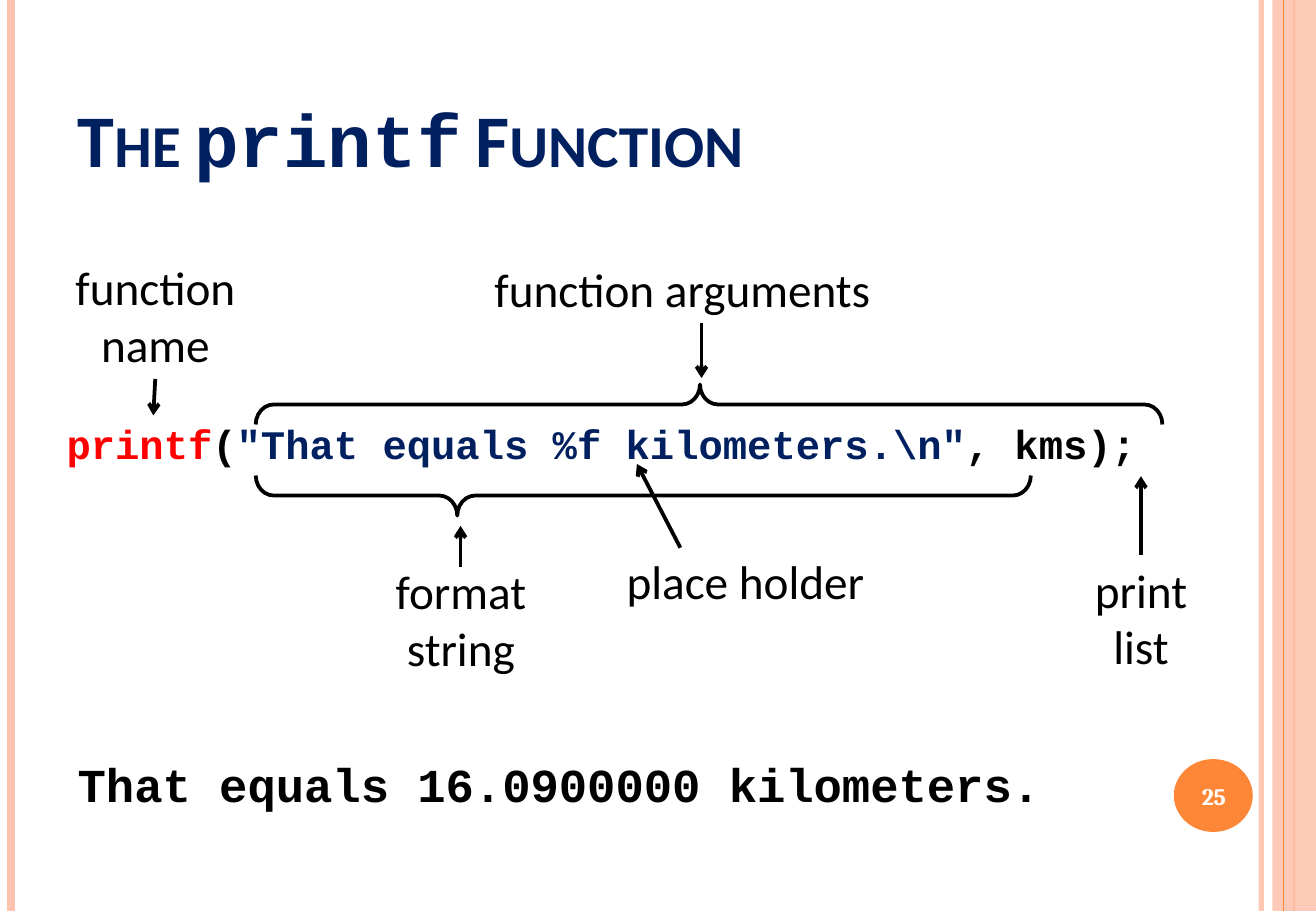
from lxml.etree import SubElement
from pptx import Presentation
from pptx.dml.color import RGBColor
from pptx.enum.shapes import MSO_CONNECTOR, MSO_SHAPE
from pptx.enum.text import MSO_ANCHOR, PP_ALIGN
from pptx.oxml.ns import qn
from pptx.util import Inches, Pt

COLORS = {
    "navy": "002060", "black": "000000", "red": "FF0000",
    "white": "FFFFFF", "peach": "FEC3AE", "orange": "FE8637",
}
BODY, CODE, NUMBER = "Calibri", "Courier New", "Cambria"
ARROW_WIDTH = 2.25


def color(name):
    return RGBColor.from_string(COLORS[name])


def set_alpha(fill_owner, percent):
    """Make the solid colour inside an element partly transparent."""
    for srgb in fill_owner.iter(qn("a:srgbClr")):
        SubElement(srgb, qn("a:alpha"), val=str(percent * 1000))


def add_text(paragraph, words, font=BODY, size=28, ink="black", bold=False, small_caps=False):
    run = paragraph.add_run()
    run.text = words
    run.font.name, run.font.size, run.font.bold = font, Pt(size), bold
    run.font.color.rgb = color(ink)
    if small_caps:
        run.font._element.set("cap", "small")


class Board:
    """Draws on one slide; lengths are percent of its width and height."""

    def __init__(self, deck):
        self.width, self.height = deck.slide_width, deck.slide_height
        self.slide = deck.slides.add_slide(deck.slide_layouts[6])
        self.shapes = self.slide.shapes

    def x(self, share):
        return round(self.width * share / 100)

    def y(self, share):
        return round(self.height * share / 100)

    def area(self, left, top, width, height):
        return self.x(left), self.y(top), self.x(width), self.y(height)

    def block(self, preset, area, fill, alpha=100):
        block = self.shapes.add_shape(preset, *self.area(*area))
        block.shadow.inherit = False
        block.fill.solid()
        block.fill.fore_color.rgb = color(fill)
        block.line.fill.background()
        if alpha < 100:
            set_alpha(block._element.spPr, alpha)

    def line(self, start, end, ink="black", width=ARROW_WIDTH, alpha=100):
        line = self.shapes.add_connector(
            MSO_CONNECTOR.STRAIGHT,
            self.x(start[0]), self.y(start[1]), self.x(end[0]), self.y(end[1]))
        line.line.color.rgb = color(ink)
        line.line.width = Pt(width)
        properties = line._element.spPr
        SubElement(properties, qn("a:effectLst"))
        if alpha < 100:
            set_alpha(properties, alpha)
        return line

    def rule(self, x, ink, width, alpha=100):
        self.line((x, 0), (x, 100), ink, width, alpha)

    def arrow(self, start, end, source=None, side=0):
        """Draw an arrow, joined to a side of the source label if given."""
        arrow = self.line(start, end)
        SubElement(arrow.line._get_or_add_ln(), qn("a:tailEnd"), type="arrow")
        if source is not None:
            arrow.begin_connect(source, side)

    def text(self, area, *runs, align=PP_ALIGN.LEFT, anchor=MSO_ANCHOR.TOP, before=0):
        """Add a one-paragraph box; each run is a pair of words and format."""
        box = self.shapes.add_textbox(*self.area(*area))
        box.text_frame.word_wrap = True
        box.text_frame.vertical_anchor = anchor
        paragraph = box.text_frame.paragraphs[0]
        paragraph.alignment = align
        paragraph.space_before = Pt(before)
        for words, style in runs:
            add_text(paragraph, words, **style)
        return box

    def label(self, words, area, align=PP_ALIGN.CENTER):
        return self.text(area, (words, {}), align=align)

    def brace(self, area, tip, rotation):
        """Lay a right brace on its side so that it covers the given area."""
        left, top, width, height = self.area(*area)
        brace = self.shapes.add_shape(
            MSO_SHAPE.RIGHT_BRACE, left + (width - height) // 2,
            top + (height - width) // 2, height, width)
        brace.rotation = rotation
        brace.adjustments[0], brace.adjustments[1] = 0.45, tip
        brace.shadow.inherit = False
        brace.fill.background()
        brace.line.color.rgb = color("black")
        brace.line.width = Pt(ARROW_WIDTH)


def draw_frame(board):
    board.rule(95.84, "peach", 3, alpha=93)
    board.rule(0.83, "peach", 4.5)
    board.rule(98.34, "orange", 1.5)
    board.block(MSO_SHAPE.RECTANGLE, (96.68, 0, 3.32, 100), "peach", alpha=87)
    board.rule(97.51, "orange", 0.75)
    board.block(MSO_SHAPE.OVAL, (89.2, 83.33, 6, 8), "orange")
    board.text((88.92, 83.6, 6.65, 7.6),
               ("25", dict(font=NUMBER, size=14, ink="white", bold=True)),
               align=PP_ALIGN.CENTER, anchor=MSO_ANCHOR.MIDDLE)


def draw_text(board):
    heading = dict(size=44, ink="navy", bold=True)
    board.text((5, 4, 81.7, 16.67),
               ("The ", dict(heading, small_caps=True)),
               ("printf", dict(heading, font=CODE)),
               (" Function", dict(heading, small_caps=True)),
               anchor=MSO_ANCHOR.BOTTOM)
    board.text((5, 82.27, 81.7, 7.7),
               ("That equals 16.0900000 kilometers.", dict(font=CODE, bold=True)),
               before=6)
    code = dict(font=CODE, size=24, bold=True)
    board.text((4.15, 45.33, 90.86, 6.8),
               ("printf", dict(code, ink="red")),
               ("(", code),
               ('"That equals %f kilometers.\\n"', dict(code, ink="navy")),
               (", kms);", code))


def draw_callouts(board):
    function_name = board.label("function name", (4.15, 27.73, 15.3, 13.87))
    board.arrow((11.8, 41.6), (11.65, 45.6), function_name, side=2)

    arguments = board.label("function arguments", (36.66, 27.87, 33.3, 7.6), PP_ALIGN.LEFT)
    board.arrow((53.31, 35.47), (53.31, 41.5), arguments, side=2)

    board.label("format string", (27.5, 61.07, 15.05, 13.87))
    board.arrow((35, 62.27), (35, 57.73))

    print_list = board.label("print list", (81.7, 60.93, 10, 13.87))
    board.arrow((86.7, 60.93), (86.7, 52.27), print_list, side=0)

    board.label("place holder", (46.7, 60, 22.5, 7.6), PP_ALIGN.LEFT)
    board.arrow((51.7, 60.13), (48.4, 50.93))

    board.brace((19.43, 42.2, 68.9, 4.4), tip=0.49, rotation=270)
    board.brace((19.43, 52.2, 58.9, 4.4), tip=0.74, rotation=90)


def main():
    deck = Presentation()
    deck.slide_width, deck.slide_height = Inches(10.83), Inches(7.5)
    board = Board(deck)
    draw_frame(board)
    draw_text(board)
    draw_callouts(board)
    deck.save("out.pptx")


if __name__ == "__main__":
    main()
